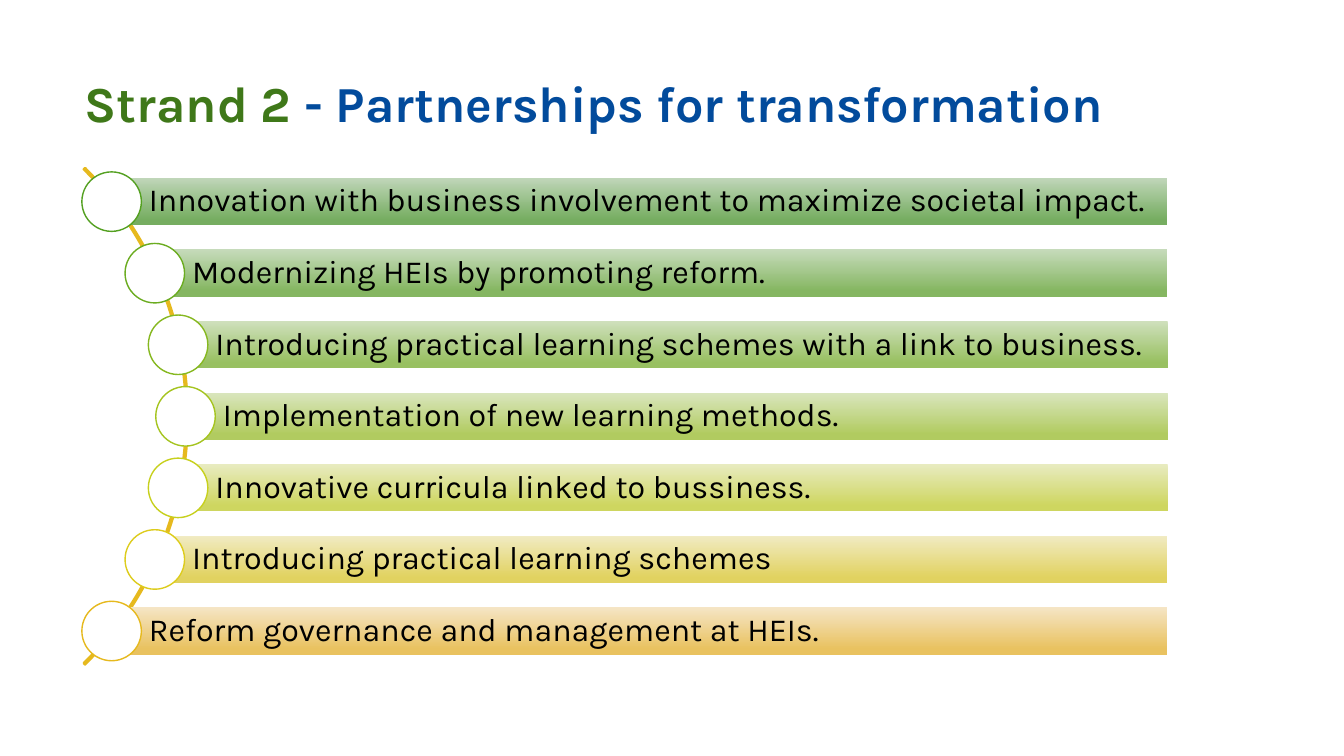
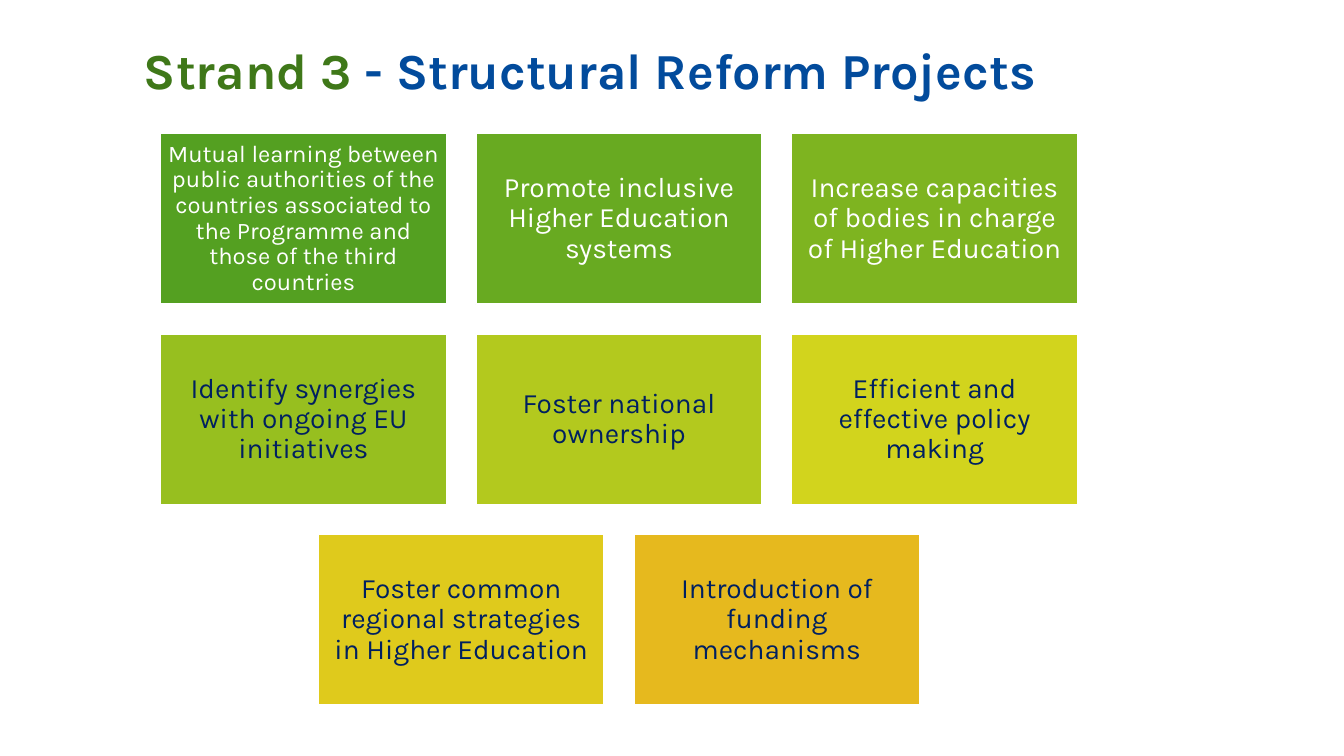
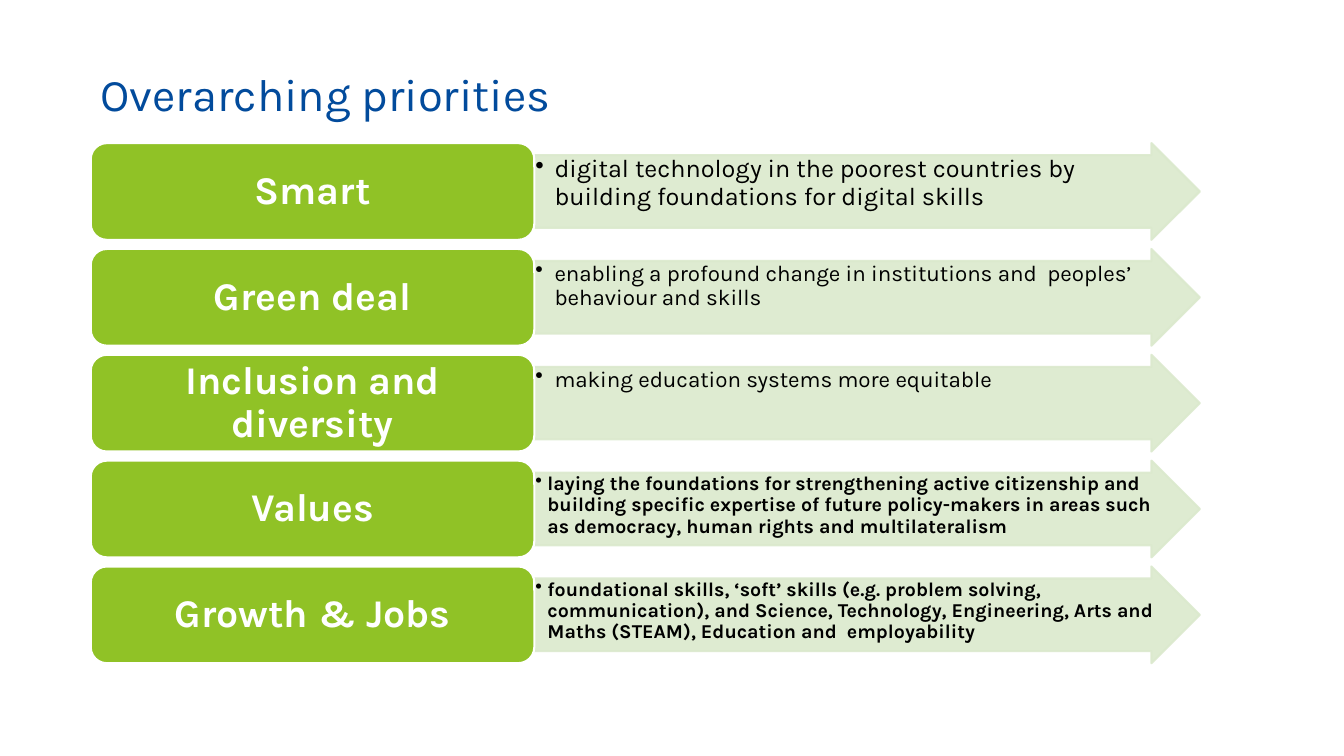
from dataclasses import dataclass
from math import sqrt

from lxml.etree import SubElement
from pptx import Presentation
from pptx.dml.color import RGBColor
from pptx.enum.shapes import MSO_SHAPE
from pptx.enum.text import MSO_ANCHOR, PP_ALIGN
from pptx.oxml.ns import qn
from pptx.shapes.autoshape import Shape
from pptx.slide import Slide
from pptx.util import Inches, Pt

FONT = "Karla"
BLUE, GREEN, NAVY = "024B9C", "3F7819", "002060"
WHITE, BLACK = "FFFFFF", "000000"
LIME, PALE_GREEN, AMBER = "90C226", "DBE9CD", "E6B91E"


@dataclass
class Activity:
    """A bar of the curved list with its gradient and circle outline."""
    text: str
    light: str
    dark: str
    ring: str


@dataclass
class Goal:
    """A tile of the goal grid."""
    text: str
    fill: str
    color: str = NAVY
    size: float = 20
    margin: float = 0.08


@dataclass
class Priority:
    """A labelled arrow with its explanation."""
    label: str
    detail: str
    size: float
    hang: float = 0.19
    bold: bool = False


ACTIVITIES = [
    Activity("Innovation with business involvement to maximize societal impact.", "C0D6B9", "76AD61", "54A021"),
    Activity("Modernizing HEIs by promoting reform.", "C6DBBB", "85B661", "6BAC20"),
    Activity("Introducing practical learning schemes with a link to business.", "CFE0BC", "98C061", "86B820"),
    Activity("Implementation of new learning methods.", "DAE6BE", "B1CB60", "A5C41F"),
    Activity("Innovative curricula linked to bussiness.", "E8EBC0", "CED660", "C7D01D"),
    Activity("Introducing practical learning schemes", "F1EBC3", "E1D260", "DDCC1C"),
    Activity("Reform governance and management at HEIs.", "F5E5C5", "E9C260", AMBER),
]

GOALS = [
    Goal("Mutual learning between public authorities of the countries associated to the Programme "
         "and those of the third countries", "54A021", WHITE, 17, 0.07),
    Goal("Promote inclusive Higher Education systems", "68AA21", WHITE),
    Goal("Increase capacities of bodies in charge of Higher Education", "7EB420", WHITE),
    Goal("Identify synergies with ongoing EU initiatives", "97BF1F"),
    Goal("Foster national ownership", "B3C91E"),
    Goal("Efficient and effective policy making", "D2D41D"),
    Goal("Foster common regional strategies in Higher Education", "DFCA1C"),
    Goal("Introduction of funding mechanisms", AMBER),
]

PRIORITIES = [
    Priority("Smart", "digital technology in the poorest countries by building foundations for digital skills", 18),
    Priority("Green deal", "enabling a profound change in institutions and  peoples’ behaviour and skills", 16),
    Priority("Inclusion and diversity", "making education systems more equitable", 16),
    Priority("Values", "laying the foundations for strengthening active citizenship and building specific "
             "expertise of future policy-makers in areas such as democracy, human rights and multilateralism",
             14, 0.12, True),
    Priority("Growth & Jobs", "foundational skills, ‘soft’ skills (e.g. problem solving, communication), and "
             "Science, Technology, Engineering, Arts and Maths (STEAM), Education and  employability",
             14, 0.12, True),
]


def rgb(value: str) -> RGBColor:
    """Turn a hex string into a colour."""
    return RGBColor.from_string(value)


def write(shape: Shape, *parts: tuple[str, str], size: float, bold: bool = False,
          align: PP_ALIGN = PP_ALIGN.LEFT, anchor: MSO_ANCHOR = MSO_ANCHOR.MIDDLE,
          margins: tuple[float, float, float, float] = (0.1, 0.05, 0.1, 0.05),
          spacing: float = 0.9, hang: float = 0) -> None:
    """Write (text, colour) parts as one paragraph, bulleted when it has a hanging indent."""
    frame = shape.text_frame
    frame.word_wrap = True
    frame.vertical_anchor = anchor
    frame.margin_left, frame.margin_top, frame.margin_right, frame.margin_bottom = map(Inches, margins)
    paragraph = frame.paragraphs[0]
    if hang:
        properties = paragraph._p.get_or_add_pPr()
        properties.set("marL", str(Inches(hang)))
        properties.set("indent", str(-Inches(hang)))
        SubElement(properties, qn("a:buChar")).set("char", "•")
    paragraph.alignment = align
    paragraph.line_spacing = spacing
    for text, color in parts:
        run = paragraph.add_run()
        run.text = text
        run.font.name = FONT
        run.font.size = Pt(size)
        run.font.bold = bold
        run.font.color.rgb = rgb(color)


def add_title(slide: Slide, left: float, top: float, width: float, height: float,
              *parts: tuple[str, str], size: float = 36, bold: bool = True) -> None:
    """Add a slide title."""
    title = slide.shapes.add_textbox(*map(Inches, (left, top, width, height)))
    write(title, *parts, size=size, bold=bold, anchor=MSO_ANCHOR.TOP, spacing=1)


def add_preset(slide: Slide, kind: MSO_SHAPE, left: float, top: float, width: float, height: float,
               fill: str | tuple[str, str] | None = None, line: str | None = None,
               line_width: float = 1.5, opacity: int = 100) -> Shape:
    """Add a preset shape; a pair of fill colours makes a downward gradient."""
    shape = slide.shapes.add_shape(kind, *map(Inches, (left, top, width, height)))
    shape.shadow.inherit = False
    if isinstance(fill, tuple):
        shape.fill.gradient()
        shape.fill.gradient_angle = 270
        for stop, color, position in zip(shape.fill.gradient_stops, fill, (0, 0.88)):
            stop.color.rgb = rgb(color)
            stop.position = position
    elif fill:
        shape.fill.solid()
        shape.fill.fore_color.rgb = rgb(fill)
    else:
        shape.fill.background()
    if line:
        shape.line.color.rgb = rgb(line)
        shape.line.width = Pt(line_width)
    else:
        shape.line.fill.background()
    if opacity < 100:
        for color in shape._element.spPr.iter(qn("a:srgbClr")):
            SubElement(color, qn("a:alpha")).set("val", str(opacity * 1000))
    return shape


def build_partnerships(slide: Slide) -> None:
    """Draw the list of activities along an arc."""
    add_title(slide, 0.74, 0.67, 11.11, 1.44, ("Strand 2 ", GREEN), ("- Partnerships for transformation", BLUE))
    center_x, center_y, arc_size, orbit = -1.62, 4.13, 6.97, 3.46
    pitch, bar_height, circle_size, bars_right = 0.71, 0.47, 0.59, 11.58
    arc = add_preset(slide, MSO_SHAPE.BLOCK_ARC, center_x - arc_size / 2, center_y - arc_size / 2,
                     arc_size, arc_size, line=AMBER)
    for index, value in enumerate((189, 27, 0.003)):
        arc.adjustments[index] = value
    for row, activity in enumerate(ACTIVITIES):
        offset = (row - len(ACTIVITIES) // 2) * pitch
        x, y = center_x + sqrt(orbit ** 2 - offset ** 2), center_y + offset
        bar = add_preset(slide, MSO_SHAPE.RECTANGLE, x, y - bar_height / 2, bars_right - x, bar_height,
                         (activity.light, activity.dark))
        write(bar, (activity.text, BLACK), size=23, margins=(0.37, 0.06, 0.06, 0.06))
        add_preset(slide, MSO_SHAPE.OVAL, x - circle_size / 2, y - circle_size / 2,
                   circle_size, circle_size, WHITE, activity.ring, 1)


def build_reforms(slide: Slide) -> None:
    """Draw the goals as a grid whose short last row is centred."""
    add_title(slide, 1.33, 0.34, 9.4, 0.77, ("Strand 3 ", GREEN), ("- Structural Reform Projects", BLUE))
    left, top, width, height, gap, columns = 1.59, 1.32, 2.84, 1.7, 0.29, 3
    for index, goal in enumerate(GOALS):
        row, column = divmod(index, columns)
        in_row = min(columns, len(GOALS) - row * columns)
        x = left + (column + (columns - in_row) / 2) * (width + gap)
        tile = add_preset(slide, MSO_SHAPE.RECTANGLE, x, top + row * (height + gap), width, height,
                          goal.fill, WHITE)
        write(tile, (goal.text, goal.color), size=goal.size, align=PP_ALIGN.CENTER,
              margins=(goal.margin,) * 4)


def build_priorities(slide: Slide) -> None:
    """Draw each priority as a label followed by an arrow."""
    add_title(slide, 0.9, 0.61, 9.4, 0.62, ("Overarching priorities", BLUE), size=32.4, bold=False)
    left, top, label_width, arrow_width, height, pitch = 0.9, 1.42, 4.4, 6.6, 0.96, 1.05
    for row, priority in enumerate(PRIORITIES):
        y = top + row * pitch
        arrow = add_preset(slide, MSO_SHAPE.RIGHT_ARROW, left + label_width, y, arrow_width, height,
                           PALE_GREEN, PALE_GREEN, opacity=90)
        arrow.adjustments[0] = 0.75
        write(arrow, (priority.detail, BLACK), size=priority.size, bold=priority.bold,
              anchor=MSO_ANCHOR.TOP, margins=(0.01,) * 4, hang=priority.hang)
        label = add_preset(slide, MSO_SHAPE.ROUNDED_RECTANGLE, left, y, label_width, height, LIME, WHITE)
        write(label, (priority.label, WHITE), size=28, bold=True, align=PP_ALIGN.CENTER,
              margins=(0.12, 0.06, 0.12, 0.06))


def main() -> None:
    """Build and save the presentation."""
    deck = Presentation()
    deck.slide_width, deck.slide_height = Inches(13.33), Inches(7.5)
    blank = deck.slide_layouts[6]
    for build in (build_partnerships, build_reforms, build_priorities):
        build(deck.slides.add_slide(blank))
    deck.save("out.pptx")


if __name__ == "__main__":
    main()
